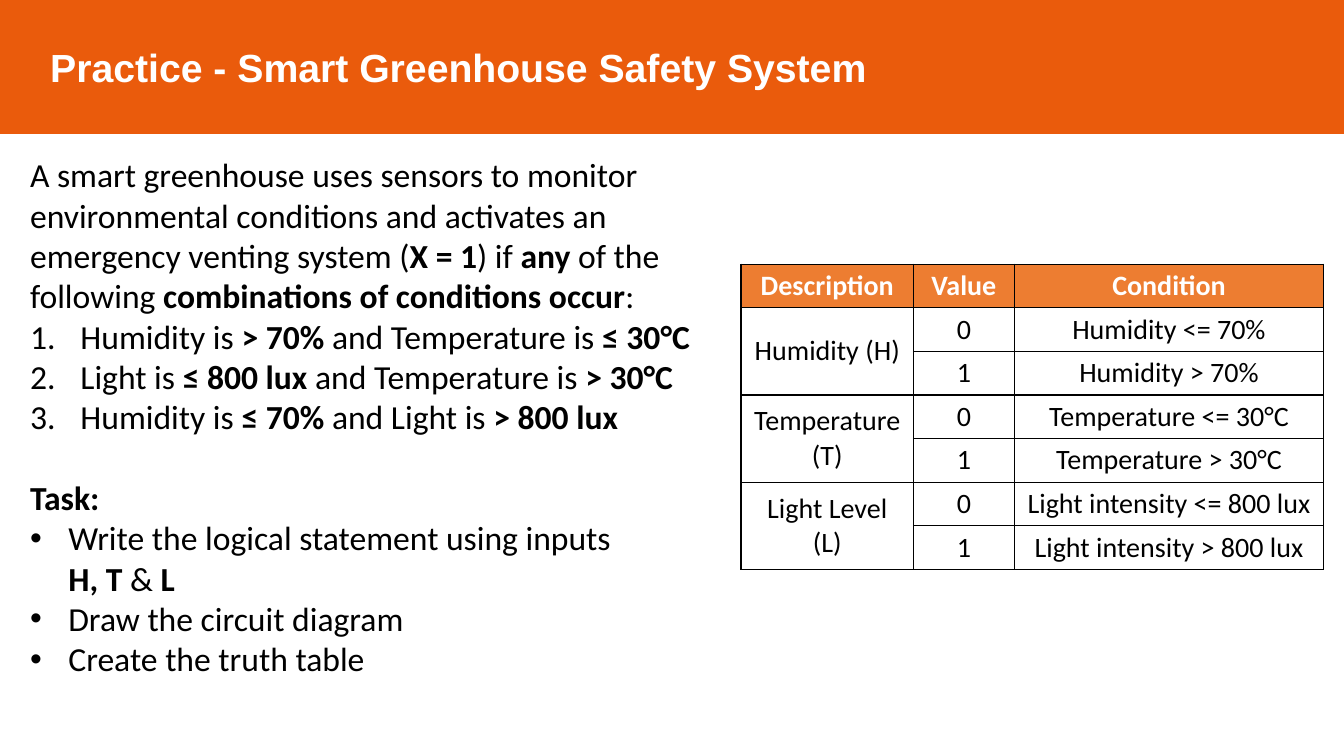
from lxml import etree
from pptx import Presentation
from pptx.dml.color import RGBColor
from pptx.enum.shapes import MSO_SHAPE
from pptx.enum.text import MSO_ANCHOR, MSO_AUTO_SIZE, PP_ALIGN
from pptx.oxml.ns import qn
from pptx.util import Inches, Pt

RECTANGLE = MSO_SHAPE.RECTANGLE
MIDDLE = MSO_ANCHOR.MIDDLE
LEFT, CENTER = PP_ALIGN.LEFT, PP_ALIGN.CENTER
FIT_SHAPE = MSO_AUTO_SIZE.SHAPE_TO_FIT_TEXT

THEME = {
    "banner": RGBColor(0xEA, 0x5B, 0x0C),
    "header": RGBColor(0xED, 0x7D, 0x31),
    "white": RGBColor(0xFF, 0xFF, 0xFF),
    "black": RGBColor(0, 0, 0),
    "title_font": "Arial",
    "body_font": "Calibri",
    "title_size": Pt(28),
    "body_size": Pt(24),
    "body_gap": Pt(29),
    "table_size": Pt(20),
}


def add_runs(paragraph, marked, size, color, font=THEME["body_font"]):
    """Add text run by run: *stars* enclose bold parts, a newline breaks the line."""
    for part, text in enumerate(marked.split("*")):
        for line, piece in enumerate(text.split("\n")):
            if line:
                paragraph.add_line_break()
            if piece:
                run = paragraph.add_run()
                run.text = piece
                run.font.name = font
                run.font.size = size
                run.font.bold = part % 2 == 1
                run.font.color.rgb = color


def add_borders(cell):
    properties = cell._tc.get_or_add_tcPr()
    for side in ("lnL", "lnR", "lnT", "lnB"):
        border = etree.SubElement(properties, qn(f"a:{side}"), w=str(Pt(1)))
        fill = etree.SubElement(border, qn("a:solidFill"))
        etree.SubElement(fill, qn("a:srgbClr"), val=str(THEME["black"]))


prs = Presentation()
prs.slide_width = Inches(13.33)
prs.slide_height = Inches(7.5)
slide = prs.slides.add_slide(prs.slide_layouts[6])

# Title banner
banner = slide.shapes.add_shape(RECTANGLE, 0, 0, prs.slide_width, Inches(1.32))
banner.shadow.inherit = False
banner.fill.solid()
banner.fill.fore_color.rgb = THEME["banner"]
banner.line.color.rgb = THEME["banner"]
banner.line.width = Pt(1)
banner.text_frame.word_wrap = True
banner.text_frame.vertical_anchor = MIDDLE
title = banner.text_frame.paragraphs[0]
title.alignment = LEFT
title._p.get_or_add_pPr().set("marL", str(Inches(0.4)))
add_runs(title, "*Practice - Smart Greenhouse Safety System*",
         THEME["title_size"], THEME["white"], THEME["title_font"])

# Scenario and tasks
BULLETS = {  # kind: (indent, bullet font, bullet tag, attributes)
    "number": (0.5, "+mj-lt", "a:buAutoNum", {"type": "arabicPeriod"}),
    "dot": (0.38, "Arial", "a:buChar", {"char": "•"}),
}
BRIEF = [
    ("plain", "A smart greenhouse uses sensors to monitor environmental conditions "
              "and activates an emergency venting system (*X = 1*) if *any* of the "
              "following *combinations of conditions occur*:"),
    ("number", "Humidity is *> 70%* and Temperature is *≤ 30°C*"),
    ("number", "Light is *≤ 800 lux* and Temperature is *> 30°C*"),
    ("number", "Humidity is *≤ 70%* and Light is *> 800 lux*"),
    ("heading", "*Task:*"),
    ("dot", "Write the logical statement using inputs \n*H, T *& *L*"),
    ("dot", "Draw the circuit diagram"),
    ("dot", "Create the truth table"),
]
brief = slide.shapes.add_textbox(Inches(0.2), Inches(1.48),
                                 Inches(6.96), Inches(5.35)).text_frame
brief.word_wrap = True
brief.auto_size = FIT_SHAPE
for index, (kind, text) in enumerate(BRIEF):
    paragraph = brief.add_paragraph() if index else brief.paragraphs[0]
    if kind == "heading":
        paragraph.space_before = THEME["body_gap"]
    if kind in BULLETS:
        indent, font, tag, attributes = BULLETS[kind]
        properties = paragraph._p.get_or_add_pPr()
        properties.set("marL", str(Inches(indent)))
        properties.set("indent", str(-Inches(indent)))
        etree.SubElement(properties, qn("a:buFont"), typeface=font)
        etree.SubElement(properties, qn(tag), attributes)
    add_runs(paragraph, text, THEME["body_size"], THEME["black"])

# Input table: each input spans its two values
HEADINGS = ["*Description*", "*Value*", "*Condition*"]
INPUTS = [
    ("Humidity (H)", "Humidity <= 70%", "Humidity > 70%"),
    ("Temperature\n(T)", "Temperature <= 30°C", "Temperature > 30°C"),
    ("Light Level (L)", "Light intensity <= 800 lux", "Light intensity > 800 lux"),
]
rows = [HEADINGS]
for description, low, high in INPUTS:
    rows += [[description, "0", low], ["", "1", high]]

inputs = slide.shapes.add_table(len(rows), len(HEADINGS), Inches(7.35), Inches(2.62),
                                Inches(5.78), Inches(3.03)).table
for column, width in zip(inputs.columns, (1.71, 1, 3.07)):
    column.width = Inches(width)
for r, row in enumerate(rows):
    for c, text in enumerate(row):
        cell = inputs.cell(r, c)
        add_borders(cell)
        if r == 0:
            cell.fill.solid()
            cell.fill.fore_color.rgb = THEME["header"]
        else:
            cell.fill.background()
        cell.vertical_anchor = MIDDLE
        cell.margin_left = cell.margin_right = Inches(0.11)
        cell.margin_top = cell.margin_bottom = Inches(0.04)
        for index, line in enumerate(text.split("\n")):
            frame = cell.text_frame
            paragraph = frame.add_paragraph() if index else frame.paragraphs[0]
            paragraph.alignment = CENTER
            add_runs(paragraph, line, THEME["table_size"],
                     THEME["black"] if r else THEME["white"])
for top in range(1, len(rows), 2):
    inputs.cell(top, 0).merge(inputs.cell(top + 1, 0))

prs.save("out.pptx")
